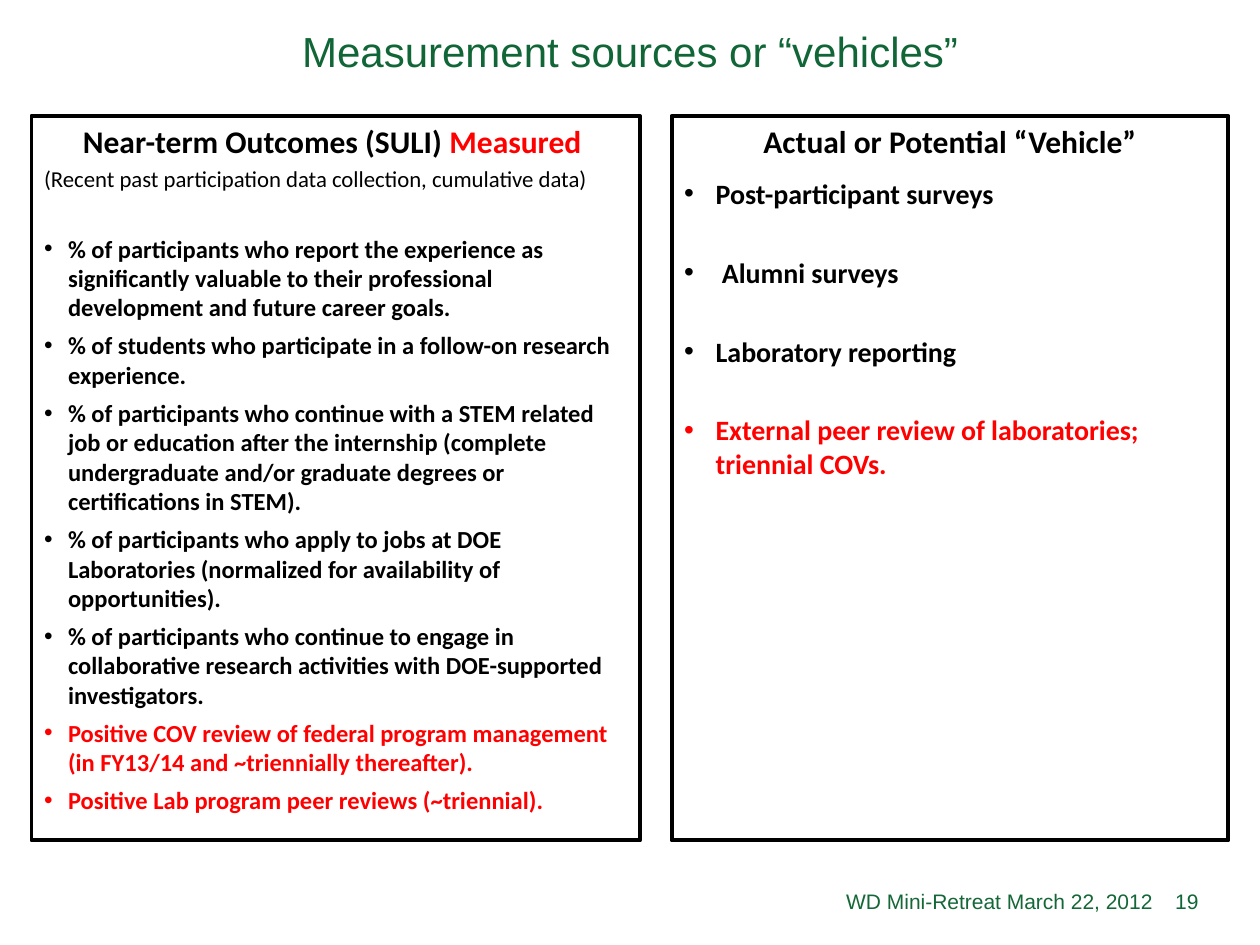
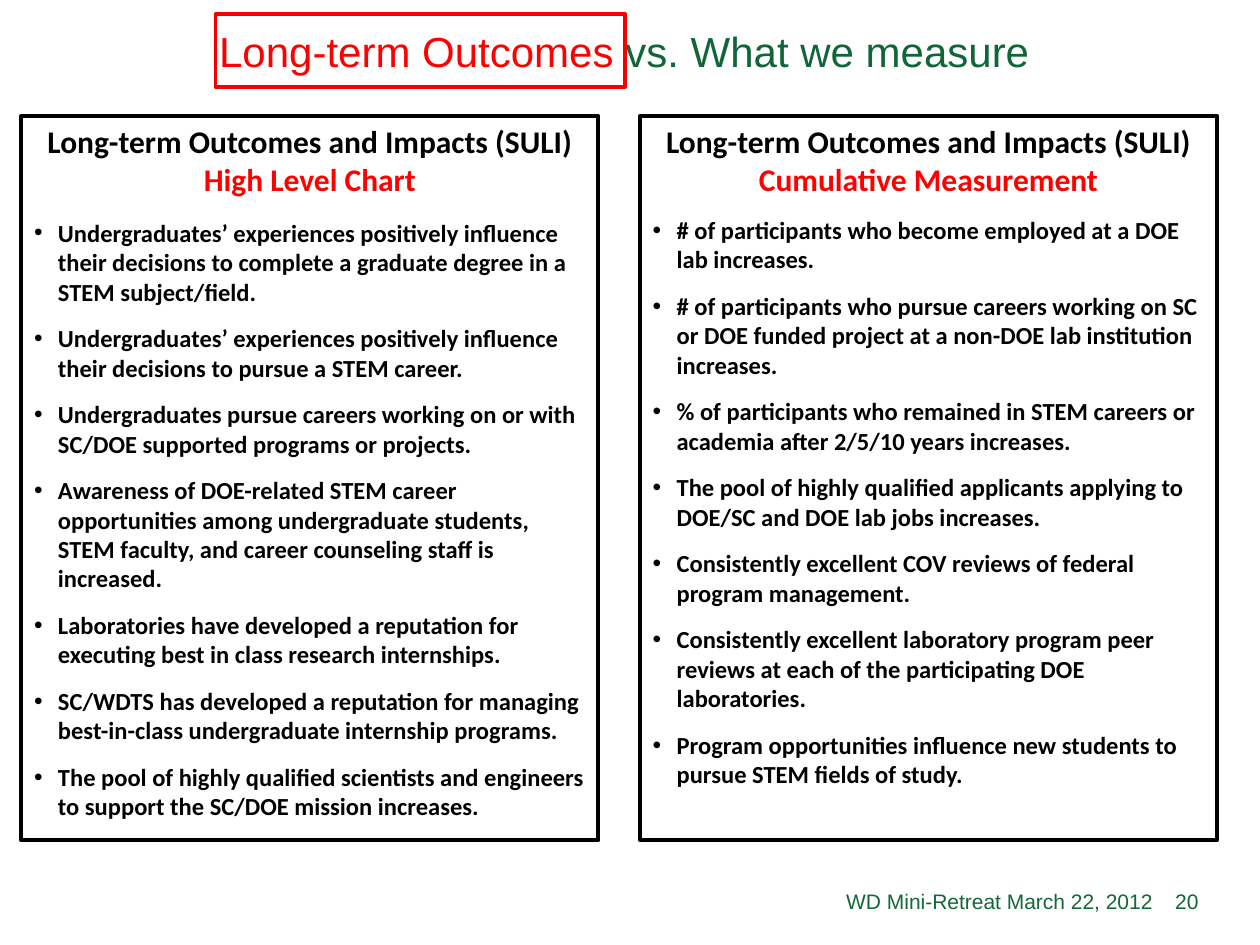
from lxml import etree
from pptx import Presentation
from pptx import util as u
from pptx.dml.color import RGBColor
from pptx.enum import shapes, text
from pptx.oxml.ns import qn

GREEN, FOOTER_GREEN = "106636", "146737"
BLACK, RED, FRAME_RED = "000000", "FF0000", "F60000"
HEAD_FONT, BODY_FONT = "Arial", "Calibri"
PANEL_TOP, PANEL_HEIGHT = 0.92, 5.75
FOOTER_TOP, FOOTER_HEIGHT = 6.95, 0.4
FOOTER = "WD Mini-Retreat March 22, 2012"

MEASURED = [
    "% of participants who report the experience as significantly valuable to their "
    "professional development and future career goals.",
    "% of students who participate in a follow-on research experience.",
    "% of participants who continue with a STEM related job or education after the internship "
    "(complete undergraduate and/or graduate degrees or certifications in STEM).",
    "% of participants who apply to jobs at DOE Laboratories (normalized for availability of "
    "opportunities).",
    "% of participants who continue to engage in collaborative research activities with "
    "DOE-supported investigators.",
]
MEASURED_REVIEWS = [
    "Positive COV review of federal program management (in FY13/14 and ~triennially thereafter).",
    "Positive Lab program peer reviews (~triennial).",
]
VEHICLES = ["Post-participant surveys", " Alumni surveys", "Laboratory reporting"]
VEHICLE_REVIEWS = ["External peer review of laboratories; triennial COVs."]
HIGH_LEVEL = [
    "Undergraduates’ experiences positively influence their decisions to complete a graduate "
    "degree in a STEM subject/field.",
    "Undergraduates’ experiences positively influence their decisions to pursue a STEM career.",
    "Undergraduates pursue careers working on or with SC/DOE supported programs or projects.",
    "Awareness of DOE-related STEM career opportunities among undergraduate students, STEM "
    "faculty, and career counseling staff is increased.",
    "Laboratories have developed a reputation for executing best in class research internships.",
    "SC/WDTS has developed a reputation for managing best-in-class undergraduate internship "
    "programs.",
    "The pool of highly qualified scientists and engineers to support the SC/DOE mission "
    "increases.",
]
CUMULATIVE = [
    "# of participants who become employed at a DOE lab increases.",
    "# of participants who pursue careers working on SC or DOE funded project at a non-DOE lab "
    "institution increases.",
    "% of participants who remained in STEM careers or academia after 2/5/10 years increases.",
    "The pool of highly qualified applicants applying to DOE/SC and DOE lab jobs increases.",
    "Consistently excellent COV reviews of federal program management.",
    "Consistently excellent laboratory program peer reviews at each of the participating DOE "
    "laboratories.",
    "Program opportunities influence new students to pursue STEM fields of study.",
]


def rgb(color):
    return RGBColor.from_string(color)


def place(sp, left, top, width, height):
    sp.left, sp.top = u.Inches(left), u.Inches(top)
    sp.width, sp.height = u.Inches(width), u.Inches(height)


def outline(sp, color, width):
    sp.line.color.rgb = rgb(color)
    sp.line.width = u.Pt(width)


def prepare_frame(sp, anchor):
    tf = sp.text_frame
    tf.word_wrap = True
    tf.auto_size = text.MSO_AUTO_SIZE.NONE
    tf.vertical_anchor = anchor
    return tf


def add_runs(p, parts, size, font=BODY_FONT, bold=False):
    """Add (wording, colour) parts to one paragraph in a common style."""
    for wording, color in parts:
        r = p.add_run()
        r.text = wording
        r.font.name, r.font.size, r.font.bold = font, u.Pt(size), bold
        r.font.color.rgb = rgb(color)


def next_paragraph(tf, indent, before):
    """Return the empty first paragraph or a new one, with a hanging indent."""
    first = tf.paragraphs[0]
    p = tf.add_paragraph() if first.runs else first
    pPr = p._p.get_or_add_pPr()
    pPr.set("marL", str(u.Inches(indent)))
    pPr.set("indent", str(-u.Inches(indent)))
    p.space_before = u.Pt(before)
    return p


def add_plain(tf, parts, size, before=0, bold=True, align=text.PP_ALIGN.CENTER):
    """Add a panel line without a bullet."""
    p = next_paragraph(tf, 0, before)
    etree.SubElement(p._p.get_or_add_pPr(), qn("a:buNone"))
    p.alignment = align
    add_runs(p, parts, size, bold=bold)


def add_bullets(tf, items, gap, first_gap=None, color=BLACK, size=14, indent=0.19):
    for i, item in enumerate(items):
        before = first_gap if i == 0 and first_gap is not None else gap
        p = next_paragraph(tf, indent, before)
        add_runs(p, [(item, color)], size, bold=True)


def set_panel(s, idx, left, width):
    """Frame one content placeholder and return its text frame."""
    sp = s.placeholders[idx]
    place(sp, left, PANEL_TOP, width, PANEL_HEIGHT)
    outline(sp, BLACK, 2.25)
    return prepare_frame(sp, text.MSO_ANCHOR.TOP)


def add_footer_text(s, wording, left, width, align, color):
    sp = s.shapes.add_textbox(u.Inches(left), u.Inches(FOOTER_TOP),
                              u.Inches(width), u.Inches(FOOTER_HEIGHT))
    p = prepare_frame(sp, text.MSO_ANCHOR.MIDDLE).paragraphs[0]
    p.alignment = align
    add_runs(p, [(wording, color)], 12, HEAD_FONT)


def add_slide(prs, title_parts, number):
    s = prs.slides.add_slide(prs.slide_layouts.get_by_name("Two Content"))
    sp = s.shapes.title
    place(sp, 0.25, 0.05, 9.5, 0.75)
    p = prepare_frame(sp, text.MSO_ANCHOR.MIDDLE).paragraphs[0]
    p.alignment = text.PP_ALIGN.CENTER
    p.line_spacing = 0.9
    add_runs(p, title_parts, 24, HEAD_FONT)
    add_footer_text(s, FOOTER, 3.5, 5.75, text.PP_ALIGN.RIGHT, FOOTER_GREEN)
    add_footer_text(s, str(number), 9.17, 0.5, text.PP_ALIGN.CENTER, GREEN)
    return s


def add_title_frame(s):
    sp = s.shapes.add_shape(shapes.MSO_SHAPE.RECTANGLE, u.Inches(1.71), u.Inches(0.11),
                            u.Inches(3.25), u.Inches(0.58))
    sp.shadow.inherit = False
    sp.fill.background()
    outline(sp, FRAME_RED, 2)


def build_sources_slide(prs):
    s = add_slide(prs, [("Measurement sources or “vehicles”", GREEN)], 19)

    tf = set_panel(s, 1, 0.25, 4.83)
    add_plain(tf, [("Near-term Outcomes (SULI) ", BLACK), ("Measured ", RED)], 18)
    add_plain(tf, [("(Recent past participation data collection, cumulative data)", BLACK)],
              13, before=2.6, bold=False, align=text.PP_ALIGN.LEFT)
    add_bullets(tf, MEASURED, 4.9, first_gap=23.8)
    add_bullets(tf, MEASURED_REVIEWS, 4.9, color=RED)

    tf = set_panel(s, 2, 5.33, 4.42)
    add_plain(tf, [("Actual or Potential “Vehicle”", BLACK)], 18)
    add_bullets(tf, VEHICLES, 25.8, first_gap=9.5, size=16, indent=0.25)
    add_bullets(tf, VEHICLE_REVIEWS, 25.8, color=RED, size=16, indent=0.25)


def build_outcomes_slide(prs):
    s = add_slide(prs, [("Long-term Outcomes ", RED), ("vs. What we measure ", GREEN)], 20)
    panels = [(1, 0.17, "High Level Chart", HIGH_LEVEL, 11.4),
              (2, 5.08, "Cumulative Measurement", CUMULATIVE, 9.8)]
    for idx, left, subhead, items, first_gap in panels:
        tf = set_panel(s, idx, left, 4.58)
        add_plain(tf, [("Long-term Outcomes and Impacts (SULI)", BLACK)], 18)
        add_plain(tf, [(subhead, RED)], 18)
        add_bullets(tf, items, 9.8, first_gap=first_gap)
    add_title_frame(s)


def main():
    prs = Presentation()
    prs.slide_width, prs.slide_height = u.Inches(10), u.Inches(7.5)
    build_sources_slide(prs)
    build_outcomes_slide(prs)
    prs.save("out.pptx")


if __name__ == "__main__":
    main()
